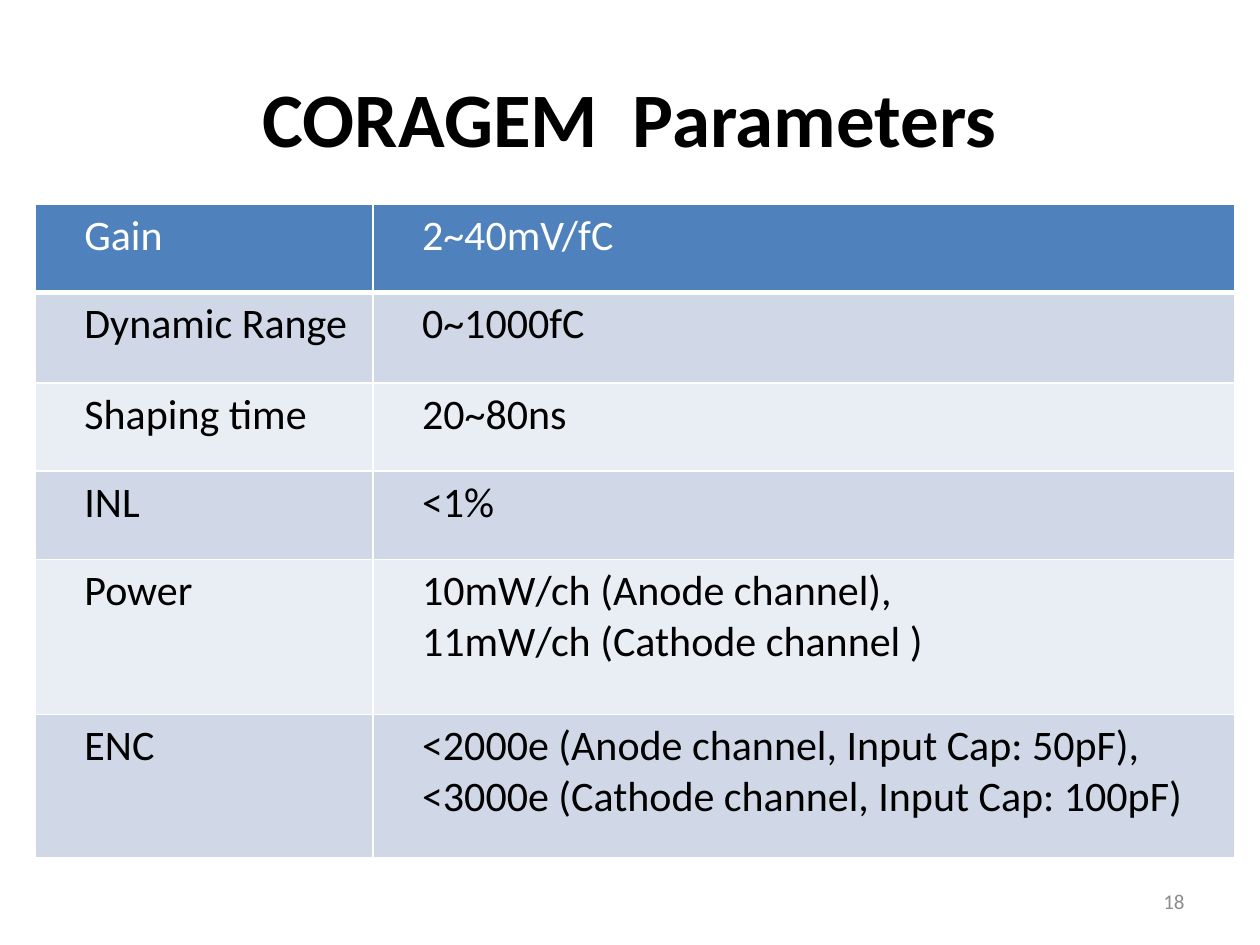
"""Build a slide with a table of front-end chip parameters."""
from lxml.etree import SubElement
from pptx import Presentation
from pptx.dml.color import RGBColor
from pptx.enum.text import MSO_ANCHOR, PP_ALIGN
from pptx.oxml.ns import qn
from pptx.util import Inches, Pt

COLORS = {
    "header": "4F81BD",
    "dark_band": "D0D8E8",
    "light_band": "E9EDF4",
    "white": "FFFFFF",
    "black": "000000",
    "gray": "8C8C8C",
}
PARAMETERS = [
    ("Gain", "2~40mV/fC", 0.7),
    ("Dynamic Range", "0~1000fC", 0.72),
    ("Shaping time", "20~80ns", 0.7),
    ("INL", "<1%", 0.7),
    ("Power", "10mW/ch (Anode channel),\n11mW/ch (Cathode channel )", 1.23),
    ("ENC", "<2000e (Anode channel, Input Cap: 50pF),\n"
            "<3000e (Cathode channel, Input Cap: 100pF)", 1.14),
]
LABELS = [
    ("CORAGEM  Parameters", (0.5, 0.3, 9, 1.25), PP_ALIGN.CENTER,
     {"size": Pt(44), "bold": True}, "black"),
    ("18", (7.17, 6.95, 2.33, 0.4), PP_ALIGN.RIGHT, {"size": Pt(12)}, "gray"),
]


def style_font(font, values, color):
    for name, value in {"name": "Calibri", **values}.items():
        setattr(font, name, value)
    font.color.rgb = RGBColor.from_string(COLORS[color])


def add_border(cell, side, width):
    line = SubElement(cell._tc.get_or_add_tcPr(), qn(f"a:ln{side}"), w=str(Pt(width)))
    fill = SubElement(line, qn("a:solidFill"))
    SubElement(fill, qn("a:srgbClr"), val=COLORS["white"])


deck = Presentation()
deck.slide_width, deck.slide_height = Inches(10), Inches(7.5)
page = deck.slides.add_slide(deck.slide_layouts[6])

for text, place, alignment, values, color in LABELS:
    box = page.shapes.add_textbox(*map(Inches, place))
    frame = box.text_frame
    frame.word_wrap = True
    frame.vertical_anchor = MSO_ANCHOR.MIDDLE
    para = frame.paragraphs[0]
    para.alignment = alignment
    span = para.add_run()
    span.text = text
    style_font(span.font, values, color)

table = page.shapes.add_table(
    len(PARAMETERS), 2, Inches(0.28), Inches(1.62), Inches(9.52), Inches(5.19)
).table
for column, width in zip(table.columns, (2.68, 6.84)):
    column.width = Inches(width)

for row_index, (label, value, height) in enumerate(PARAMETERS):
    table.rows[row_index].height = Inches(height)
    is_header = row_index == 0
    band = "header" if is_header else "dark_band" if row_index % 2 else "light_band"
    for column_index, text in enumerate((label, value)):
        cell = table.cell(row_index, column_index)
        for side in "LRTB":
            add_border(cell, side, 3 if is_header and side == "B" else 1)
        cell.fill.solid()
        cell.fill.fore_color.rgb = RGBColor.from_string(COLORS[band])
        cell.text = text
        for para in cell.text_frame.paragraphs:
            para._p.get_or_add_pPr().set("indent", str(Inches(0.29)))
            style_font(para.runs[0].font, {"size": Pt(24), "bold": False},
                       "white" if is_header else "black")

deck.save("out.pptx")
